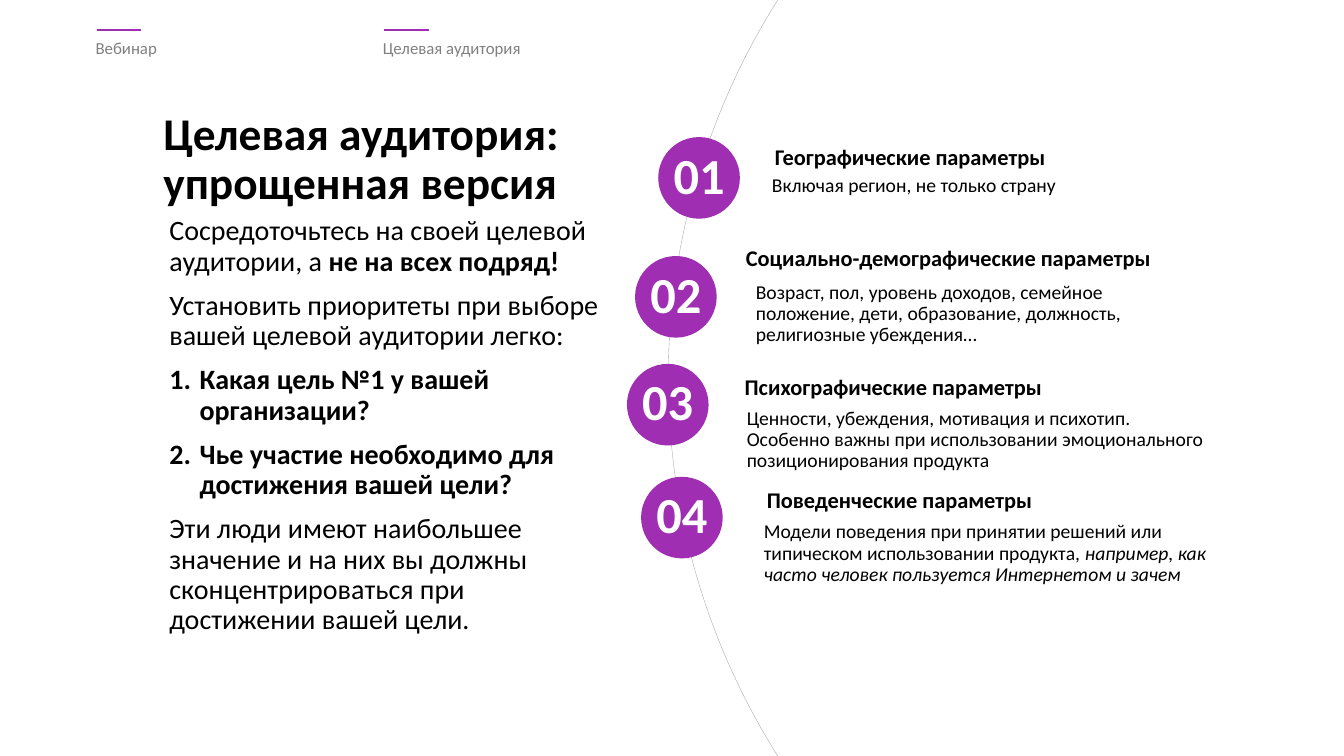
from dataclasses import dataclass

from pptx import Presentation, util as u
from pptx.dml.color import RGBColor
from pptx.enum import shapes, text
from pptx.oxml.ns import qn
from lxml import etree


@dataclass(frozen=True)
class Theme:
    font: str = "Calibri"
    accent: RGBColor = RGBColor(0x9F, 0x2E, 0xB2)
    ink: RGBColor = RGBColor(0, 0, 0)
    muted: RGBColor = RGBColor(0x80, 0x80, 0x80)
    curve: RGBColor = RGBColor(0xA6, 0xA6, 0xA6)
    paper: RGBColor = RGBColor(0xFF, 0xFF, 0xFF)
    title: float = 32.4
    body: float = 20
    label: float = 12
    heading: float = 16
    detail: float = 14
    badge: float = 36


theme = Theme()
deck = Presentation()
deck.slide_width, deck.slide_height = u.Inches(13.333), u.Inches(7.5)
CELL = deck.slide_width / 40  # square grid, 40 columns by 22.5 rows
slide = deck.slides.add_slide(deck.slide_layouts[1])


def grid(*cells):
    return [round(cell * CELL) for cell in cells]


def write(shape, paragraphs, size, color, bold=False, align=text.PP_ALIGN.LEFT):
    """Fill a shape with paragraphs: (numbered, [(words, bold, italic), ...])."""
    frame = shape.text_frame
    frame.word_wrap = True
    frame.auto_size = text.MSO_AUTO_SIZE.NONE
    for index, (numbered, runs) in enumerate(paragraphs):
        paragraph = frame.add_paragraph() if index else frame.paragraphs[0]
        props = paragraph._p.get_or_add_pPr()
        indent = round(0.9 * CELL) if numbered else 0
        props.set("marL", str(indent))
        props.set("indent", str(-indent))
        if numbered:
            etree.SubElement(props, qn("a:buFont"), typeface="+mj-lt")
            etree.SubElement(props, qn("a:buAutoNum"), type="arabicPeriod")
        else:
            etree.SubElement(props, qn("a:buNone"))
        paragraph.alignment = align
        paragraph.line_spacing = 0.9
        paragraph.space_before = u.Pt(10 if index else 0)
        for words, strong, italic in runs:
            run = paragraph.add_run()
            run.text = words
            run.font.name, run.font.size = theme.font, u.Pt(size)
            run.font.bold, run.font.italic = bold or strong, italic
            run.font.color.rgb = color


def plain(words):
    return [(False, [(words, False, False)])]


# Large curve on the right
curve = slide.shapes.add_shape(shapes.MSO_SHAPE.OVAL, *grid(19.89, -9.81, 42.12, 42.12))
curve.shadow.inherit = False
curve.fill.background()
curve.line.color.rgb, curve.line.width = theme.curve, u.Pt(0.25)

# Running labels with their ticks
for left, label in ((2.55, "Вебинар"), (11.1, "Целевая аудитория")):
    tick = slide.shapes.add_connector(
        shapes.MSO_CONNECTOR.STRAIGHT, *grid(left + 0.33, 0.9, left + 1.66, 0.9))
    tick.line.color.rgb, tick.line.width = theme.accent, u.Pt(1.25)
    etree.SubElement(tick._element.spPr, qn("a:effectLst"))
    label_box = slide.shapes.add_textbox(*grid(left, 1.05, 7.59, 1.68))
    write(label_box, plain(label), theme.label, theme.muted, align=text.PP_ALIGN.JUSTIFY)

# Title and advice
title, advice = slide.shapes.title, slide.placeholders[1]
for holder, place in ((title, (4.56, 3.15, 13.71, 3.54)), (advice, (4.74, 6.3, 13.38, 11.01))):
    holder.left, holder.top, holder.width, holder.height = grid(*place)
    holder.text_frame.vertical_anchor = text.MSO_ANCHOR.TOP
write(title, plain("Целевая аудитория: упрощенная версия"), theme.title, theme.ink, bold=True)
write(advice, [
    (False, [("Сосредоточьтесь на своей целевой аудитории, а ", False, False),
             ("не на всех подряд!", True, False)]),
    (False, [("Установить приоритеты при выборе вашей целевой аудитории легко:", False, False)]),
    (True, [("Какая цель №1 у вашей организации?", True, False)]),
    (True, [("Чье участие необходимо для достижения вашей цели?", True, False)]),
    (False, [("Эти люди имеют наибольшее значение и на них вы должны "
              "сконцентрироваться при достижении вашей цели.", False, False)]),
], theme.body, theme.ink)

# Audience parameters: badge corner, heading place, detail place
parameters = [
    ((19.59, 4.08), (22.77, 4.2, 9.66, 0.93), "Географические параметры",
     (22.68, 5.07, 11.52, 0.87), "Включая регион, не только страну", ""),
    ((18.9, 7.62), (21.9, 7.2, 13.62, 0.93), "Социально-демографические параметры",
     (22.2, 8.25, 12.21, 1.17),
     "Возраст, пол, уровень доходов, семейное положение, дети, образование, "
     "должность, религиозные убеждения…", ""),
    ((18.66, 10.83), (21.87, 11.04, 9.78, 1.14), "Психографические параметры",
     (21.93, 12, 14.22, 2.49),
     "Ценности, убеждения, мотивация и психотип. Особенно важны при использовании "
     "эмоционального позиционирования продукта", ""),
    ((19.08, 14.19), (22.53, 14.4, 11.7, 0.99), "Поведенческие параметры",
     (22.44, 15.39, 14.13, 2.61),
     "Модели поведения при принятии решений или типическом использовании продукта, ",
     "например, как часто человек пользуется Интернетом и зачем"),
]
for number, (corner, heading_place, heading, detail_place, detail, example) in enumerate(parameters, 1):
    write(slide.shapes.add_textbox(*grid(*heading_place)), plain(heading),
          theme.heading, theme.ink, bold=True)
    detail_runs = [(detail, False, False)]
    if example:
        detail_runs.append((example, False, True))
    write(slide.shapes.add_textbox(*grid(*detail_place)), [(False, detail_runs)],
          theme.detail, theme.ink)

    badge = slide.shapes.add_shape(shapes.MSO_SHAPE.OVAL, *grid(*corner, 2.43, 2.43))
    badge.shadow.inherit = False
    badge.fill.solid()
    badge.fill.fore_color.rgb = theme.accent
    badge.line.fill.background()
    frame = badge.text_frame
    frame.margin_left = frame.margin_right = frame.margin_top = frame.margin_bottom = 0
    frame.vertical_anchor = text.MSO_ANCHOR.MIDDLE
    write(badge, plain(f"{number:02d}"), theme.badge, theme.paper,
          bold=True, align=text.PP_ALIGN.CENTER)

deck.save("out.pptx")
